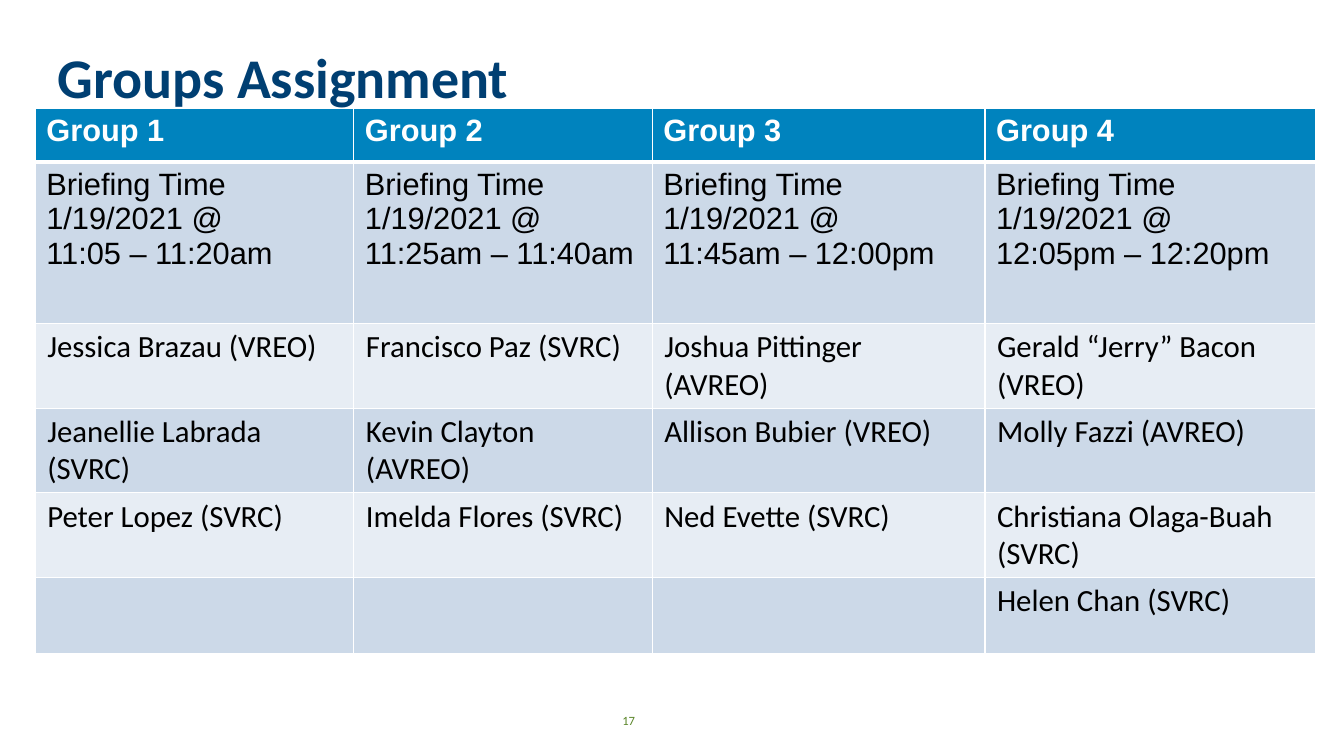
from lxml.etree import SubElement
from pptx import Presentation
from pptx.dml.color import RGBColor
from pptx.enum.text import MSO_ANCHOR as ANCHOR, PP_ALIGN as ALIGN
from pptx.oxml.ns import qn
from pptx.util import Inches, Pt

WHITE = "FFFFFF"
HEADER = "0083BE"
BANDS = ["CCD9E8", "E7EDF4"]


def write(tf, text, size=22, font="Calibri", color="000000", bold=False,
          align=ALIGN.LEFT, spacing=None):
    tf.word_wrap = True
    for i, line in enumerate(text.split("\n")):
        p = tf.paragraphs[0] if i == 0 else tf.add_paragraph()
        p.alignment = align
        p.line_spacing = spacing
        r = p.add_run()
        r.text = line
        r.font.size = Pt(size)
        r.font.name = font
        r.font.bold = bold
        r.font.color.rgb = RGBColor.from_string(color)


def add_border(cell, side, width):
    ln = SubElement(cell._tc.get_or_add_tcPr(), qn(f"a:ln{side}"), w=str(Pt(width)))
    SubElement(SubElement(ln, qn("a:solidFill")), qn("a:srgbClr"), val=WHITE)


prs = Presentation()
prs.slide_width, prs.slide_height = Inches(13.33), Inches(7.5)
s = prs.slides.add_slide(prs.slide_layouts[6])

title = s.shapes.add_textbox(Inches(0.46), Inches(0.37), Inches(10.63), Inches(0.85))
title.text_frame.vertical_anchor = ANCHOR.MIDDLE
title.text_frame.margin_left = Inches(0.11)
write(title.text_frame, "Groups Assignment", size=40, color="003F72", bold=True,
      spacing=0.9)

times = ["11:05 – 11:20am", "11:25am – 11:40am", "11:45am – 12:00pm", "12:05pm – 12:20pm"]
rows = [
    [f"Group {n}" for n in range(1, 5)],
    [f"Briefing Time\n1/19/2021 @\n{time}" for time in times],
    ["Jessica Brazau (VREO)", "Francisco Paz (SVRC)",
     "Joshua Pittinger (AVREO)", "Gerald “Jerry” Bacon (VREO)"],
    ["Jeanellie Labrada (SVRC)", "Kevin Clayton (AVREO)",
     "Allison Bubier (VREO)", "Molly Fazzi (AVREO)"],
    ["Peter Lopez (SVRC)", "Imelda Flores (SVRC)",
     "Ned Evette (SVRC)", "Christiana Olaga-Buah (SVRC)"],
    ["", "", "", "Helen Chan (SVRC)"],
]
col_widths = [3.16, 2.96, 3.3, 3.28]
row_heights = [0.53, 1.6, 0.84, 0.84, 0.84, 0.75]

table = s.shapes.add_table(len(rows), len(col_widths), Inches(0.35), Inches(1.08),
                           Inches(sum(col_widths)), Inches(sum(row_heights))).table
for column, width in zip(table.columns, col_widths):
    column.width = Inches(width)
for row, height in zip(table.rows, row_heights):
    row.height = Inches(height)

for i, texts in enumerate(rows):
    is_header, is_name = i == 0, i > 1
    for j, text in enumerate(texts):
        cell = table.cell(i, j)
        cell.margin_left = cell.margin_right = Inches(0.12 if is_name else 0.11)
        cell.margin_top = cell.margin_bottom = Inches(0.05)
        for side in "LRTB":
            under_header = (i, side) in [(0, "B"), (1, "T")]
            add_border(cell, side, 3 if under_header else 1)
        cell.fill.solid()
        fill = HEADER if is_header else BANDS[(i - 1) % 2]
        cell.fill.fore_color.rgb = RGBColor.from_string(fill)
        if text:
            write(cell.text_frame, text, font="Calibri" if is_name else "Arial",
                  color=WHITE if is_header else "000000", bold=is_header)

number = s.shapes.add_textbox(Inches(5.86), Inches(6.95), Inches(0.75), Inches(0.4))
number.text_frame.vertical_anchor = ANCHOR.MIDDLE
write(number.text_frame, "17", size=9, color="598527", align=ALIGN.CENTER)

prs.save("out.pptx")
